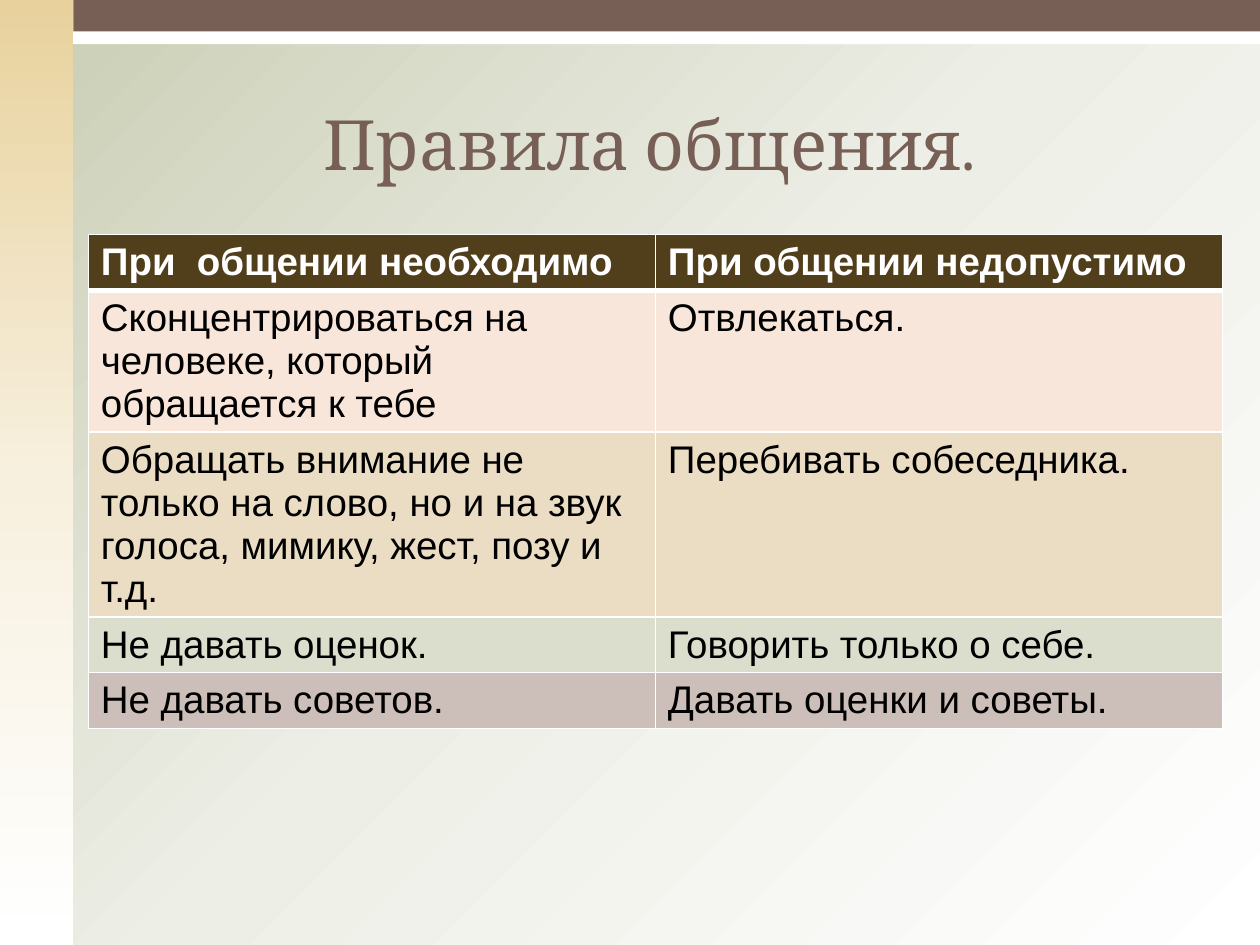
import copy
from dataclasses import dataclass
from typing import Any

import pptx
import pptx.dml.color
import pptx.enum.shapes
import pptx.enum.text
import pptx.oxml
import pptx.oxml.ns
import pptx.util

Pt = pptx.util.Pt

COLORS = {
    "white": "FFFFFF", "black": "000000", "brown": "775F55", "header": "513E1B",
    "peach": "F8E6DA", "sand": "EBDDC3", "sage": "DBDDCD", "mauve": "CCBEB8",
}
BACKDROP = ("C9CDB3", "EDEEE6", "FFFFFF")
SIDEBAR = ("E8D19D", "F7F0DE", "FFFFFF")


@dataclass(frozen=True)
class Band:
    left: float
    top: float
    width: float
    height: float
    colors: tuple[str, ...]


@dataclass(frozen=True)
class Rule:
    needed: str
    forbidden: str
    fill: str
    height: float


BANDS = [
    Band(0, 0, 720, 25.2, (COLORS["white"],)),
    Band(0, 0, 42, 540, SIDEBAR),
    Band(42, 0, 678, 18, (COLORS["brown"],)),
]
RULES = [
    Rule("При  общении необходимо", "При общении недопустимо", "header", 31.8),
    Rule("Сконцентрироваться на человеке, который обращается к тебе",
         "Отвлекаться.", "peach", 81),
    Rule("Обращать внимание не только на слово, но и на звук голоса, мимику, жест, позу и т.д.",
         "Перебивать собеседника.", "sand", 105.6),
    Rule("Не давать оценок.", "Говорить только о себе.", "sage", 31.8),
    Rule("Не давать советов.", "Давать оценки и советы.", "mauve", 31.8),
]


def rgb(value: str) -> pptx.dml.color.RGBColor:
    return pptx.dml.color.RGBColor.from_string(value)


def apply(target: Any, values: dict[str, Any]) -> None:
    for name, value in values.items():
        setattr(target, name, value)


def format_font(font: Any, name: str, size: float, color: str, bold: bool = False) -> None:
    apply(font, {"name": name, "size": Pt(size), "bold": bold})
    font.color.rgb = rgb(COLORS[color])


def fill_gradient(fill: Any, element: Any, colors: tuple[str, ...], angle: float) -> None:
    fill.gradient()
    fill.gradient_angle = 360 - angle
    stop_list = element.xpath(".//a:gsLst")[0]
    stop_list.insert(1, copy.deepcopy(stop_list[0]))
    for index, (stop, color) in enumerate(zip(fill.gradient_stops, colors)):
        stop.position = index / (len(colors) - 1)
        stop.color.rgb = rgb(color)


def draw_band(slide: Any, band: Band) -> None:
    strip = slide.shapes.add_shape(
        pptx.enum.shapes.MSO_SHAPE.RECTANGLE,
        Pt(band.left), Pt(band.top), Pt(band.width), Pt(band.height))
    strip.shadow.inherit = False
    strip.line.fill.background()
    if len(band.colors) > 1:
        fill_gradient(strip.fill, strip._element, band.colors, 90)
    else:
        strip.fill.solid()
        strip.fill.fore_color.rgb = rgb(band.colors[0])


def draw_title(slide: Any, text: str) -> None:
    title = slide.shapes.title
    apply(title, {"left": Pt(60), "top": Pt(49), "width": Pt(630), "height": Pt(60)})
    title.text_frame.text = text
    apply(title.text_frame, {
        "word_wrap": True,
        "auto_size": pptx.enum.text.MSO_AUTO_SIZE.NONE,
        "vertical_anchor": pptx.enum.text.MSO_ANCHOR.BOTTOM,
    })
    heading = title.text_frame.paragraphs[0]
    heading.alignment = pptx.enum.text.PP_ALIGN.CENTER
    format_font(heading.runs[0].font, "Cambria", 39.6, "brown")
    slide.shapes._spTree.append(title._element)


def set_borders(cell: Any, widths: dict[str, float]) -> None:
    properties = cell._tc.get_or_add_tcPr()
    for index, (side, width) in enumerate(widths.items()):
        properties.insert(index, pptx.oxml.parse_xml(
            f'<a:{side} {pptx.oxml.ns.nsdecls("a")} w="{Pt(width)}"><a:solidFill>'
            f'<a:srgbClr val="{COLORS["white"]}"/></a:solidFill></a:{side}>'))


def draw_rules(slide: Any, rules: list[Rule]) -> None:
    table = slide.shapes.add_table(
        len(rules), 2, Pt(50.5), Pt(134), Pt(648),
        Pt(sum(rule.height for rule in rules))).table
    for index, rule in enumerate(rules):
        table.rows[index].height = Pt(rule.height)
        is_header = index == 0
        borders = {"lnL": 1, "lnR": 1, "lnT": 3 if index == 1 else 1,
                   "lnB": 3 if is_header else 1}
        for cell, text in zip(table.rows[index].cells, (rule.needed, rule.forbidden)):
            cell.text = text
            cell.fill.solid()
            cell.fill.fore_color.rgb = rgb(COLORS[rule.fill])
            format_font(cell.text_frame.paragraphs[0].runs[0].font, "Arial", 22,
                        "white" if is_header else "black", is_header)
            set_borders(cell, borders)


def main() -> None:
    deck = pptx.Presentation()
    apply(deck, {"slide_width": Pt(720), "slide_height": Pt(540)})
    slide = deck.slides.add_slide(deck.slide_layouts.get_by_name("Title Only"))
    fill_gradient(slide.background.fill, slide._element, BACKDROP, 45)
    for band in BANDS:
        draw_band(slide, band)
    draw_title(slide, "Правила общения. ")
    draw_rules(slide, RULES)
    deck.save("out.pptx")


if __name__ == "__main__":
    main()
